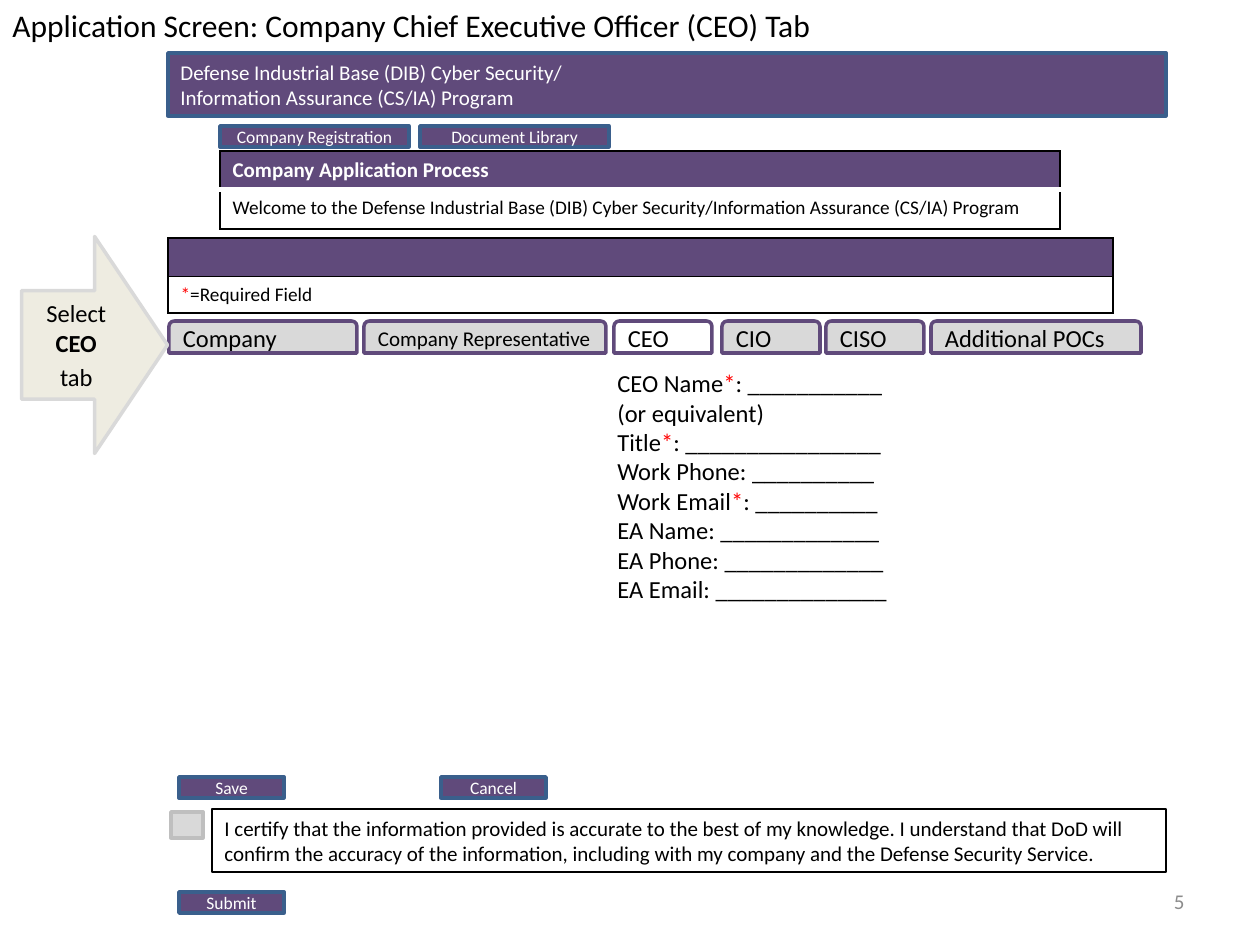
"""Build the CEO tab of the company application screen."""
from lxml import etree
from pptx import Presentation
from pptx.dml.color import RGBColor
from pptx.enum.shapes import MSO_SHAPE
from pptx.enum.text import MSO_ANCHOR, MSO_AUTO_SIZE, PP_ALIGN
from pptx.oxml.ns import qn
from pptx.util import Pt

RECT, TAB, ARROW = MSO_SHAPE.RECTANGLE, MSO_SHAPE.ROUND_2_SAME_RECTANGLE, MSO_SHAPE.UP_ARROW
TOP, MIDDLE, BOTTOM = MSO_ANCHOR.TOP, MSO_ANCHOR.MIDDLE, MSO_ANCHOR.BOTTOM
LEFT, CENTER, RIGHT = PP_ALIGN.LEFT, PP_ALIGN.CENTER, PP_ALIGN.RIGHT
FIT = MSO_AUTO_SIZE.SHAPE_TO_FIT_TEXT
EMU_PER_PX = 914400 / 126
FONT = "Calibri"
PURPLE, BLUE, GREY, SILVER = "604A7B", "3A5F8C", "D9D9D9", "BFBFBF"
CREAM, MUTED, RED, BLACK, WHITE = "EEECE1", "8C8C8C", "FF0000", "000000", "FFFFFF"

TITLE = "Application Screen: Company Chief Executive Officer (CEO) Tab"
PROGRAM = ["Defense Industrial Base (DIB) Cyber Security/", "Information Assurance (CS/IA) Program"]
WELCOME = ("Welcome to the Defense Industrial Base (DIB) Cyber Security/"
           "Information Assurance (CS/IA) Program")
CERTIFY = ("I certify that the information provided is accurate to the best of my knowledge. "
           "I understand that DoD will confirm the accuracy of the information, "
           "including with my company and the Defense Security Service.")
FORM = ["CEO Name*: ___________", "(or equivalent)", "Title*: ________________",
        "Work Phone: __________", "Work Email*: __________", "EA Name: _____________",
        "EA Phone: _____________", "EA Email: ______________"]
BUTTONS = [("Company Registration", 220, 126, 189), ("Document Library", 420, 126, 189),
           ("Save", 179, 777, 105), ("Cancel", 441, 777, 105), ("Submit", 179, 892, 105)]
TABS = [("Company", 169, 188, 14, GREY), ("Company Representative", 364, 242, 12, GREY),
        ("CEO", 614, 98, 14, WHITE), ("CIO", 722, 98, 14, GREY),
        ("CISO", 826, 98, 14, GREY), ("Additional POCs", 931, 210, 14, GREY)]


def px(length):
    return round(length * EMU_PER_PX)


def rgb(color):
    return RGBColor.from_string(color)


def assign(target, **values):
    for name, value in values.items():
        setattr(target, name, value)


def write(frame, lines, size, color=BLACK, align=LEFT, bold=False):
    """Write lines, with each asterisk in red."""
    for index, line in enumerate(lines):
        paragraph = frame.add_paragraph() if index else frame.paragraphs[0]
        paragraph.alignment = align
        for part in line.replace("*", "\n*\n").split("\n"):
            if part:
                run = paragraph.add_run()
                run.text = part
                assign(run.font, name=FONT, size=Pt(size), bold=bold)
                run.font.color.rgb = rgb(RED if part == "*" else color)


def add_box(slide, kind, area, fill, line, width=2, lines=(), size=12, anchor=MIDDLE, **style):
    box = slide.shapes.add_shape(kind, *map(px, area))
    box.shadow.inherit = False
    box.fill.solid()
    box.fill.fore_color.rgb = rgb(fill)
    box.line.color.rgb = rgb(line)
    box.line.width = Pt(width)
    assign(box.text_frame, word_wrap=True, vertical_anchor=anchor)
    write(box.text_frame, lines, size, **style)
    return box


def add_label(slide, area, lines, size, frame_format, **style):
    frame = slide.shapes.add_textbox(*map(px, area)).text_frame
    assign(frame, **frame_format)
    write(frame, lines, size, **style)


def set_borders(cell, **edges):
    properties = cell._tc.get_or_add_tcPr()
    for index, side in enumerate("LRTB"):
        color, width = edges.get(side, (BLACK, 1))
        edge = etree.Element(qn(f"a:ln{side}"), w=str(Pt(width)))
        etree.SubElement(etree.SubElement(edge, qn("a:solidFill")), qn("a:srgbClr"), val=color)
        properties.insert(index, edge)


def add_panel(slide, left, top, width, heights, header, body, anchor, divider):
    """Add a two-row table: a purple header over a white body."""
    area = (left, top, width, sum(heights))
    table = slide.shapes.add_table(2, 1, *map(px, area)).table
    for row, height in zip(table.rows, heights):
        row.height = px(height)
    head, content = table.cell(0, 0), table.cell(1, 0)
    for cell, fill in ((head, PURPLE), (content, WHITE)):
        cell.fill.solid()
        cell.fill.fore_color.rgb = rgb(fill)
    if header:
        write(head.text_frame, [header], 12, WHITE, bold=True)
    else:
        assign(head, margin_top=0, margin_bottom=0)
    content.vertical_anchor = anchor
    write(content.text_frame, [body], 11)
    set_borders(head, B=divider)
    set_borders(content, T=divider)


def add_pointer(slide):
    pointer = add_box(slide, ARROW, (-14, 272, 217, 146), CREAM, GREY,
                      lines=["Select CEO", "tab"], size=14, align=CENTER)
    pointer.rotation = 90
    pointer.text_frame._txBody.bodyPr.set("vert", "vert270")
    select, tab = pointer.text_frame.paragraphs
    select.runs[0].text = "Select "
    ceo = select.add_run()
    ceo.text = "CEO"
    assign(ceo.font, name=FONT, size=Pt(14), bold=True)
    ceo.font.color.rgb = rgb(BLACK)
    tab.space_before = Pt(3)


def main():
    deck = Presentation()
    assign(deck, slide_width=px(1260), slide_height=px(945))
    slide = deck.slides.add_slide(deck.slide_layouts[6])
    grow = {"word_wrap": False, "auto_size": FIT}

    add_box(slide, RECT, (168, 53, 998, 63), PURPLE, BLUE, lines=PROGRAM, color=WHITE)
    for text, left, top, width in BUTTONS:
        add_box(slide, RECT, (left, top, width, 21), PURPLE, BLUE,
                lines=[text], size=10, color=WHITE, align=CENTER)
    add_panel(slide, 220, 151, 840, (38, 40), "Company Application Process", WELCOME,
              TOP, (WHITE, 3))
    add_panel(slide, 168, 238, 945, (38, 36), "", "*=Required Field", BOTTOM, (BLACK, 1))
    add_box(slide, RECT, (212, 809, 954, 63), WHITE, BLACK, 0.75, [CERTIFY], anchor=TOP)
    add_box(slide, RECT, (171, 812, 32, 26), GREY, SILVER)
    add_label(slide, (0, 0, 850, 50), [TITLE], 18, grow)
    add_label(slide, (605, 362, 297, 251), FORM, 14, grow)
    for text, left, width, size, fill in TABS:
        add_box(slide, TAB, (left, 321, width, 32), fill, PURPLE, lines=[text], size=size)
    add_pointer(slide)
    add_label(slide, (903, 876, 294, 50), ["5"], 12,
              {"word_wrap": True, "vertical_anchor": MIDDLE}, color=MUTED, align=RIGHT)
    deck.save("out.pptx")


if __name__ == "__main__":
    main()
